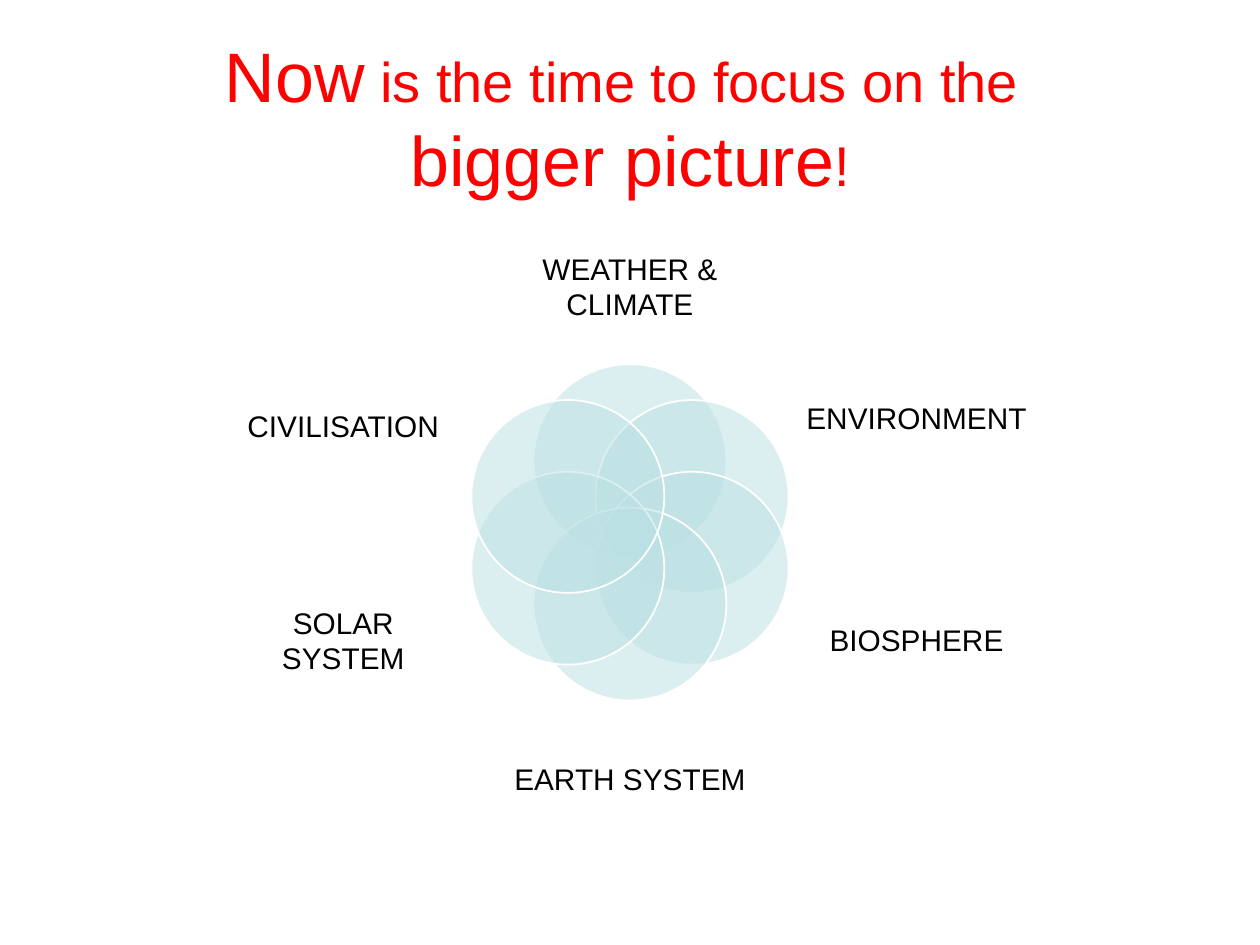
from dataclasses import dataclass
from math import cos, radians, sin

from lxml.etree import SubElement
from pptx import Presentation
from pptx.dml.color import RGBColor as RGB
from pptx.enum.shapes import MSO_SHAPE as Shape
from pptx.enum.text import MSO_ANCHOR as Anchor, PP_ALIGN as Align
from pptx.oxml.ns import qn
from pptx.util import Pt


@dataclass(frozen=True)
class Theme:
    font: str = "Arial"
    title: RGB = RGB(0xFF, 0x00, 0x00)
    label: RGB = RGB(0x00, 0x00, 0x00)
    petal: RGB = RGB(0xBB, 0xE0, 0xE3)
    outline: RGB = RGB(0xFF, 0xFF, 0xFF)
    petal_alpha: int = 50
    big_size: float = 40
    title_size: float = 32
    label_size: float = 17


@dataclass(frozen=True)
class Box:
    left: float
    top: float
    width: float
    height: float

    def lengths(self) -> tuple:
        return Pt(self.left), Pt(self.top), Pt(self.width), Pt(self.height)


@dataclass(frozen=True)
class Topic:
    text: str
    box: Box


THEME = Theme()
CENTER_X, CENTER_Y = 360, 304.2
RING_RADIUS, DIAMETER = 41, 110.2
LEFT_X, MIDDLE_X, RIGHT_X = 131, 291.4, 458.6
SIDE_W, MIDDLE_W = 130.4, 137.2

# Clockwise from the top
TOPICS = [
    Topic("WEATHER & CLIMATE", Box(MIDDLE_X, 126, MIDDLE_W, 75)),
    Topic("ENVIRONMENT", Box(RIGHT_X, 197.5, SIDE_W, 82)),
    Topic("BIOSPHERE", Box(RIGHT_X, 320, SIDE_W, 91.5)),
    Topic("EARTH SYSTEM", Box(MIDDLE_X, 407.5, MIDDLE_W, 75)),
    Topic("SOLAR SYSTEM", Box(LEFT_X, 320, SIDE_W, 91.5)),
    Topic("CIVILISATION", Box(LEFT_X, 197.5, SIDE_W, 91.5)),
]


def add_text_box(s, box: Box):
    tf = s.shapes.add_textbox(*box.lengths()).text_frame
    tf.word_wrap = True
    tf.vertical_anchor = Anchor.MIDDLE
    tf.paragraphs[0].alignment = Align.CENTER
    return tf


def style_run(r, size: float, color: RGB) -> None:
    r.font.name = THEME.font
    r.font.size = Pt(size)
    r.font.color.rgb = color


def add_title(s) -> None:
    p = add_text_box(s, Box(0, 21.6, 720, 90)).paragraphs[0]
    lines = [
        [("Now", THEME.big_size), (" is the time to focus on the ", THEME.title_size)],
        [("bigger picture", THEME.big_size), ("!", THEME.title_size)],
    ]
    for i, line in enumerate(lines):
        if i:
            p.add_line_break()
        for text, size in line:
            r = p.add_run()
            r.text = text
            style_run(r, size, THEME.title)


def add_petal(s, angle: float) -> None:
    x = CENTER_X + RING_RADIUS * sin(radians(angle))
    y = CENTER_Y - RING_RADIUS * cos(radians(angle))
    box = Box(x - DIAMETER / 2, y - DIAMETER / 2, DIAMETER, DIAMETER)
    sp = s.shapes.add_shape(Shape.OVAL, *box.lengths())
    sp.shadow.inherit = False
    sp.fill.solid()
    sp.fill.fore_color.rgb = THEME.petal
    sp.line.color.rgb = THEME.outline
    sp.line.width = Pt(1)
    # Fill transparency
    color = sp.fill._xPr.find(qn("a:solidFill"))[0]
    SubElement(color, qn("a:alpha")).set("val", str(THEME.petal_alpha * 1000))


def add_label(s, topic: Topic) -> None:
    tf = add_text_box(s, topic.box)
    tf.margin_left = tf.margin_right = tf.margin_top = tf.margin_bottom = 0
    p = tf.paragraphs[0]
    p.text = topic.text
    style_run(p.runs[0], THEME.label_size, THEME.label)


def main() -> None:
    prs = Presentation()
    prs.slide_width, prs.slide_height = Pt(720), Pt(540)
    s = prs.slides.add_slide(prs.slide_layouts[6])

    add_title(s)

    # Ring of overlapping circles with their labels
    for i, topic in enumerate(TOPICS):
        add_petal(s, i * 360 / len(TOPICS))
        add_label(s, topic)

    prs.save("out.pptx")


if __name__ == "__main__":
    main()
